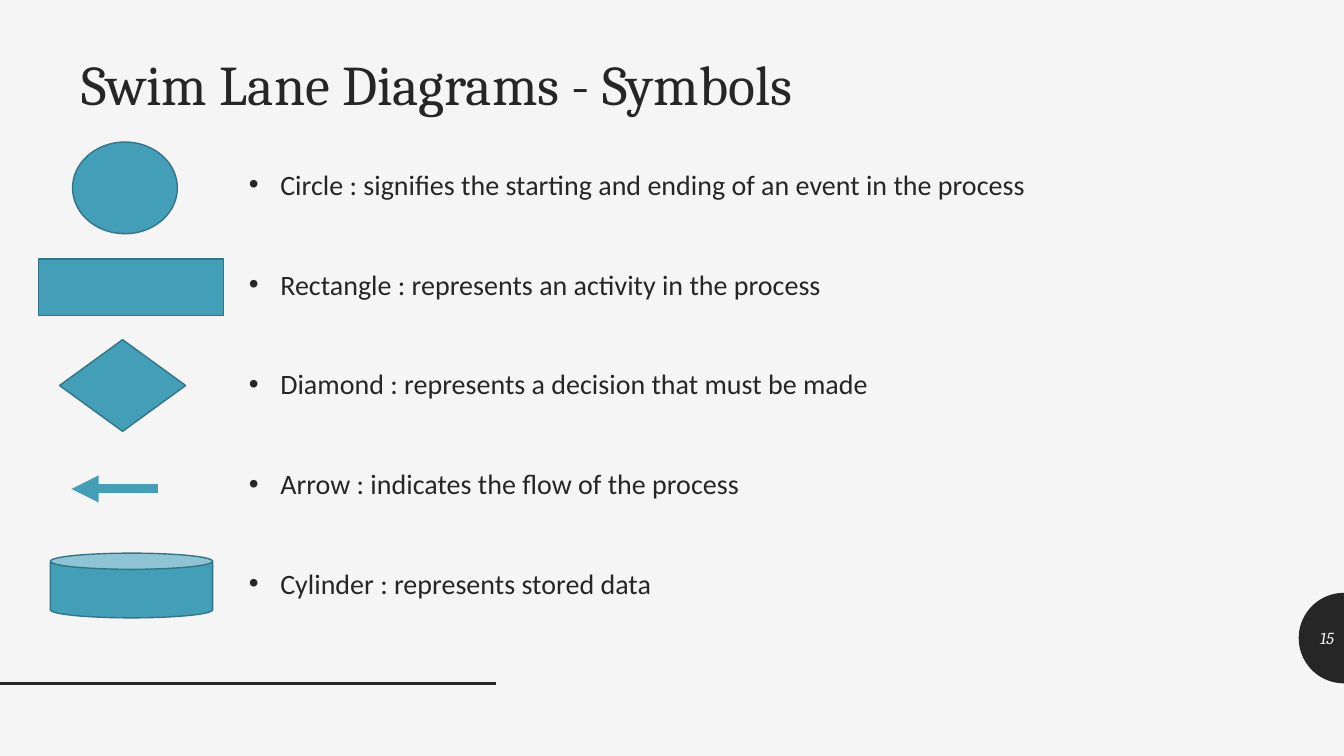
"""Builds the slide that explains the symbols of swim lane diagrams."""
import math

import pptx
import pptx.dml.color
import pptx.enum.shapes
import pptx.enum.text
import pptx.oxml
import pptx.oxml.ns
import pptx.util
from lxml import etree

Cm = pptx.util.Cm
Pt = pptx.util.Pt
Preset = pptx.enum.shapes.MSO_SHAPE
Anchor = pptx.enum.text.MSO_ANCHOR
Align = pptx.enum.text.PP_ALIGN

COLOURS = {"paper": "F5F5F5", "ink": "262626", "symbol": "439EB7", "outline": "327587"}
FONTS = {"heading": "Cambria", "text": "Calibri"}
WIDTH, HEIGHT = 33.87, 19.05

SYMBOLS = [
    (Preset.OVAL, 1.83, 3.58, 2.64, 2.31),
    (Preset.RECTANGLE, 0.97, 6.53, 4.67, 1.42),
    (Preset.DIAMOND, 1.5, 8.56, 3.18, 2.31),
    (Preset.CAN, 1.27, 13.94, 4.09, 1.63),
]
MEANINGS = [
    "Circle : signifies the starting and ending of an event in the process",
    "Rectangle : represents an activity in the process",
    "Diamond : represents a decision that must be made",
    "Arrow : indicates the flow of the process",
    "Cylinder : represents stored data",
]


def colour(name):
    return pptx.dml.color.RGBColor.from_string(COLOURS[name])


class SlideBuilder:
    """Holds the style and the current slide."""

    def __init__(self, presentation):
        self.slide = presentation.slides.add_slide(presentation.slide_layouts[1])
        background = self.slide.background.fill
        background.solid()
        background.fore_color.rgb = colour("paper")

    def place(self, shape, left, top, width, height, anchor=Anchor.TOP):
        shape.left, shape.top = Cm(left), Cm(top)
        shape.width, shape.height = Cm(width), Cm(height)
        frame = shape.text_frame
        frame.word_wrap = True
        frame.auto_size = pptx.enum.text.MSO_AUTO_SIZE.NONE
        frame.vertical_anchor = anchor
        return frame

    def add_text(self, paragraph, text, size, font, ink="ink", italic=False):
        run = paragraph.add_run()
        run.text = text
        run.font.size = Pt(size)
        run.font.name = FONTS[font]
        run.font.italic = italic
        run.font.color.rgb = colour(ink)

    def title(self, text, *box):
        paragraph = self.place(self.slide.shapes.title, *box).paragraphs[0]
        paragraph.alignment = Align.LEFT
        paragraph.line_spacing = 0.9
        self.add_text(paragraph, text, 40, "heading")

    def bullets(self, items, *box):
        frame = self.place(self.slide.placeholders[1], *box)
        for index, item in enumerate(items):
            paragraph = frame.add_paragraph() if index else frame.paragraphs[0]
            paragraph.line_spacing = 1.12
            paragraph.space_before = Pt(44.4 if index else 0)
            properties = paragraph._p.get_or_add_pPr()
            properties.set("marL", str(Cm(0.79)))
            properties.set("indent", str(Cm(-0.79)))
            etree.SubElement(properties, pptx.oxml.ns.qn("a:buFont"), typeface="Arial")
            etree.SubElement(properties, pptx.oxml.ns.qn("a:buChar"), char="•")
            self.add_text(paragraph, item, 20, "text")

    def symbol(self, preset, *box):
        shape = self.slide.shapes.add_shape(preset, *map(Cm, box))
        shape.shadow.inherit = False
        shape.fill.solid()
        shape.fill.fore_color.rgb = colour("symbol")
        shape.line.color.rgb = colour("outline")
        shape.line.width = Pt(1)

    def line(self, left, right, y, ink, weight, arrow=False):
        connector = self.slide.shapes.add_connector(
            pptx.enum.shapes.MSO_CONNECTOR.STRAIGHT, Cm(left), Cm(y), Cm(right), Cm(y))
        connector.line.color.rgb = colour(ink)
        connector.line.width = Pt(weight)
        if arrow:
            etree.SubElement(connector.line._get_or_add_ln(),
                             pptx.oxml.ns.qn("a:headEnd"), type="triangle")
        etree.SubElement(connector._element.spPr, pptx.oxml.ns.qn("a:effectLst"))

    def half_disc(self, centre_x, centre_y, radius, steps=48):
        angles = [math.pi * (0.5 + step / steps) for step in range(steps + 1)]
        points = [(Cm(centre_x + radius * math.cos(angle)),
                   Cm(centre_y + radius * math.sin(angle))) for angle in angles]
        builder = self.slide.shapes.build_freeform(*points[0])
        builder.add_line_segments(points[1:], close=True)
        shape = builder.convert_to_shape()
        shape.shadow.inherit = False
        shape.fill.solid()
        shape.fill.fore_color.rgb = colour("ink")
        shape.line.fill.background()

    def page_number(self, text, *box):
        shape = self.slide.shapes.add_textbox(*map(Cm, box))
        paragraph = self.place(shape, *box, anchor=Anchor.MIDDLE).paragraphs[0]
        paragraph.alignment = Align.RIGHT
        paragraph.space_after = Pt(6)
        self.add_text(paragraph, text, 12, "heading", "paper", italic=True)


def main():
    presentation = pptx.Presentation()
    presentation.slide_width, presentation.slide_height = Cm(WIDTH), Cm(HEIGHT)
    builder = SlideBuilder(presentation)
    builder.half_disc(WIDTH, 16.08, 1.14)
    builder.line(0, 12.5, 17.22, "ink", 2)
    builder.title("Swim Lane Diagrams - Symbols", 1.8, 1.32, 25.02, 2.31)
    builder.bullets(MEANINGS, 6.02, 3.99, 24.56, 12.6)
    builder.page_number("15", 32.74, 15.57, 1.13, 1.02)
    for symbol in SYMBOLS:
        builder.symbol(*symbol)
    builder.line(1.8, 3.99, 12.32, "symbol", 6.5, arrow=True)
    presentation.save("out.pptx")


if __name__ == "__main__":
    main()
